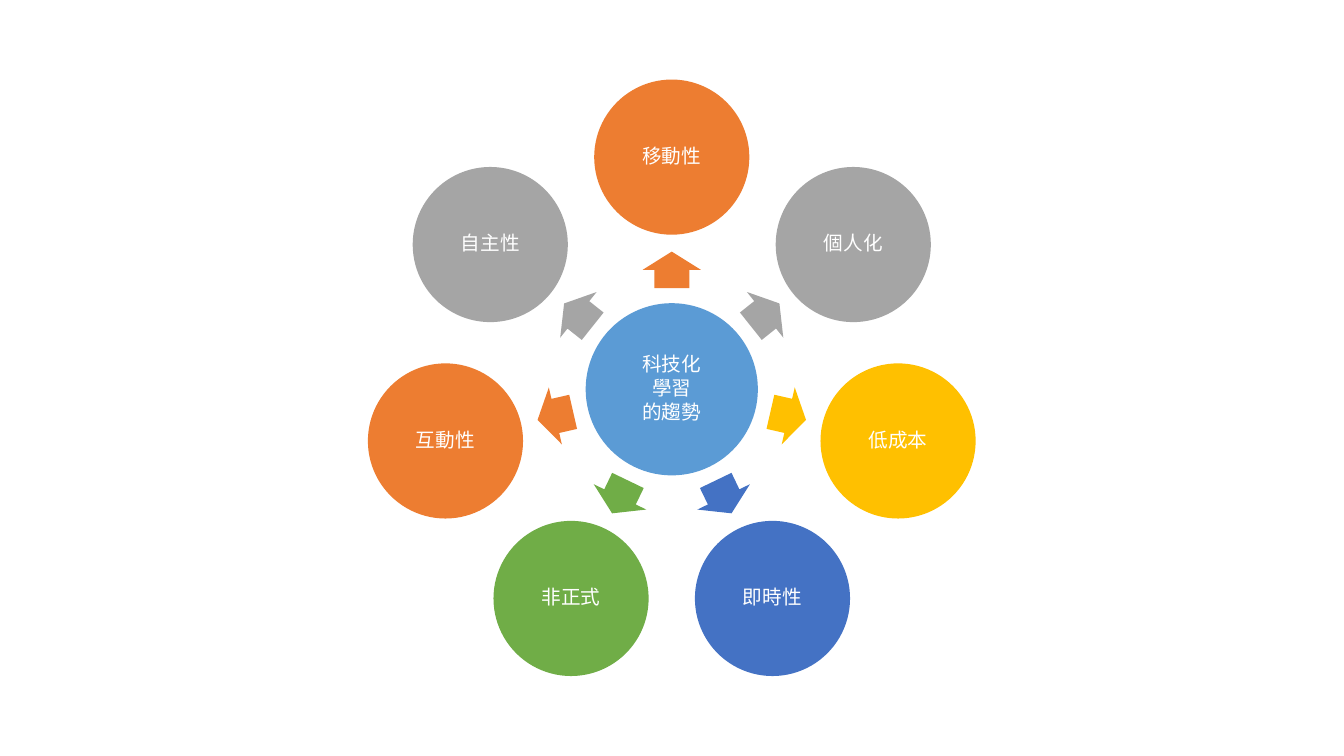
import math
from dataclasses import dataclass

import pptx
import pptx.dml.color
import pptx.enum.shapes
import pptx.enum.text
import pptx.oxml.ns
import pptx.shapes.autoshape
import pptx.slide
import pptx.util
from lxml import etree
from pptx.util import Cm

FONT_NAME = "Noto Sans CJK SC"
CENTER_X, CENTER_Y = 16.93, 9.81
HUB_DIAMETER = 4.34
TREND_DIAMETER, TREND_ORBIT = 3.91, 5.85
ARROW_LENGTH, ARROW_WIDTH, ARROW_ORBIT = 0.92, 1.47, 3.01


@dataclass
class Trend:
    label: str
    color: str


HUB_LINES = ["科技化", "學習", "的趨勢"]
HUB_COLOR = "5B9BD5"

# Clockwise from the top
TRENDS = [
    Trend("移動性", "ED7D31"),
    Trend("個人化", "A5A5A5"),
    Trend("低成本", "FFC000"),
    Trend("即時性", "4472C4"),
    Trend("非正式", "70AD47"),
    Trend("互動性", "ED7D31"),
    Trend("自主性", "A5A5A5"),
]


def rgb(color: str) -> pptx.dml.color.RGBColor:
    return pptx.dml.color.RGBColor.from_string(color)


def add_centered_shape(
    slide: pptx.slide.Slide,
    kind: pptx.enum.shapes.MSO_SHAPE,
    x: float,
    y: float,
    width: float,
    height: float,
    color: str,
) -> pptx.shapes.autoshape.Shape:
    """Add a plain filled shape around the point (x, y), in centimetres."""
    shape = slide.shapes.add_shape(
        kind, Cm(x - width / 2), Cm(y - height / 2), Cm(width), Cm(height)
    )
    shape.shadow.inherit = False
    shape.fill.solid()
    shape.fill.fore_color.rgb = rgb(color)
    shape.line.fill.background()
    return shape


def add_circle(
    slide: pptx.slide.Slide,
    x: float,
    y: float,
    diameter: float,
    color: str,
    lines: list[str],
) -> None:
    circle = add_centered_shape(
        slide, pptx.enum.shapes.MSO_SHAPE.OVAL, x, y, diameter, diameter, color
    )
    frame = circle.text_frame
    frame.word_wrap = True
    frame.vertical_anchor = pptx.enum.text.MSO_ANCHOR.MIDDLE
    frame.margin_left = frame.margin_right = Cm(0.05)
    frame.margin_top = frame.margin_bottom = Cm(0.05)
    for index, line in enumerate(lines):
        paragraph = frame.add_paragraph() if index else frame.paragraphs[0]
        paragraph.alignment = pptx.enum.text.PP_ALIGN.CENTER
        paragraph.line_spacing = 0.9
        paragraph.space_after = pptx.util.Pt(1.8)
        run = paragraph.add_run()
        run.text = line
        run.font.size = pptx.util.Pt(14)
        run.font.color.rgb = rgb("FFFFFF")
        run.font.name = FONT_NAME
        # East Asian typeface
        properties = run.font._element
        east_asian = etree.SubElement(properties, pptx.oxml.ns.qn("a:ea"))
        east_asian.set("typeface", FONT_NAME)


def add_arrow(
    slide: pptx.slide.Slide, x: float, y: float, rotation: float, color: str
) -> None:
    arrow = add_centered_shape(
        slide,
        pptx.enum.shapes.MSO_SHAPE.RIGHT_ARROW,
        x,
        y,
        ARROW_LENGTH,
        ARROW_WIDTH,
        color,
    )
    arrow.adjustments[0] = 0.6
    arrow.adjustments[1] = 0.5
    arrow.rotation = rotation


def orbit_point(radius: float, angle: float) -> tuple[float, float]:
    radians = math.radians(angle)
    return CENTER_X + radius * math.cos(radians), CENTER_Y + radius * math.sin(radians)


def main() -> None:
    presentation = pptx.Presentation()
    presentation.slide_width = Cm(33.87)
    presentation.slide_height = Cm(19.05)
    slide = presentation.slides.add_slide(presentation.slide_layouts[6])

    # Hub
    add_circle(slide, CENTER_X, CENTER_Y, HUB_DIAMETER, HUB_COLOR, HUB_LINES)

    # Trends around the hub, each with its arrow
    for index, trend in enumerate(TRENDS):
        angle = (270 + index * 360 / len(TRENDS)) % 360
        add_arrow(slide, *orbit_point(ARROW_ORBIT, angle), angle, trend.color)
        x, y = orbit_point(TREND_ORBIT, angle)
        add_circle(slide, x, y, TREND_DIAMETER, trend.color, [trend.label])

    presentation.save("out.pptx")


if __name__ == "__main__":
    main()
